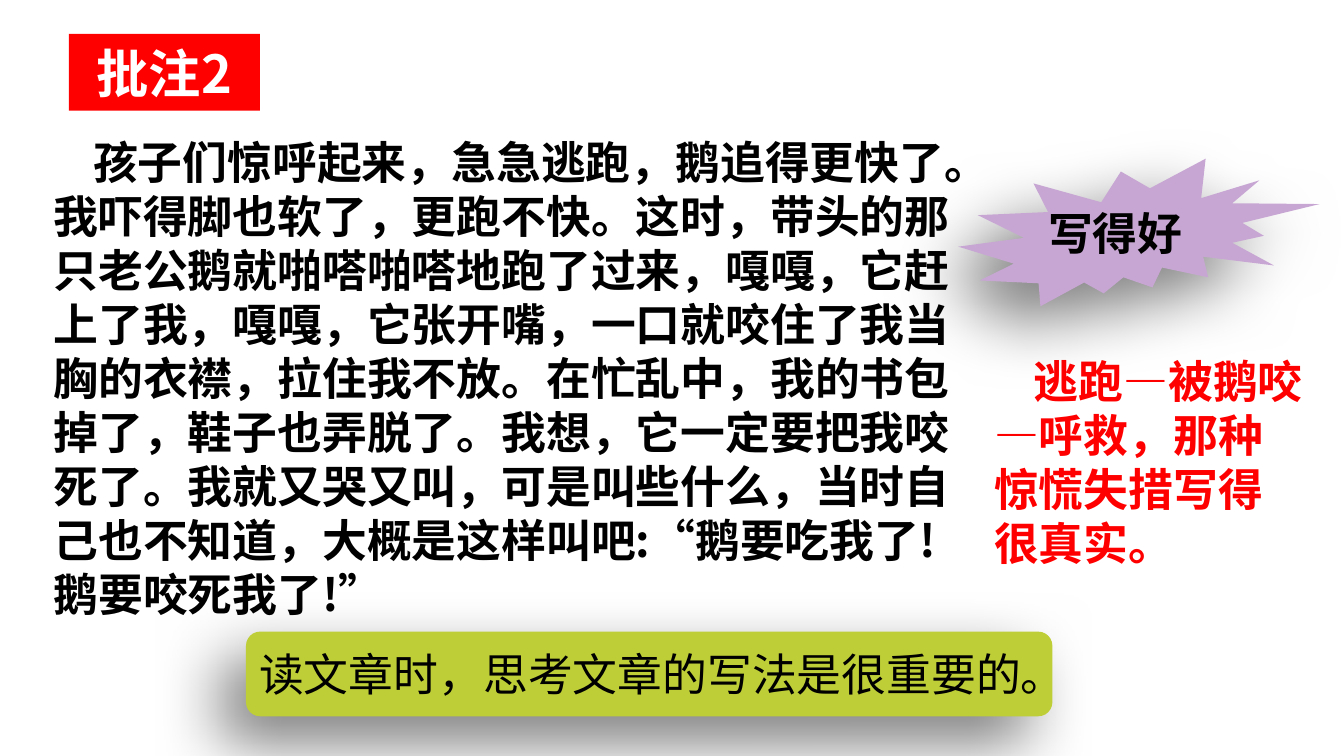
from pptx import Presentation
from pptx.dml.color import RGBColor
from pptx.enum.shapes import MSO_SHAPE
from pptx.enum.text import MSO_ANCHOR, MSO_AUTO_SIZE, PP_ALIGN
from pptx.oxml import parse_xml
from pptx.oxml.ns import nsdecls
from pptx.util import Cm, Pt

FONT = "Noto Sans CJK SC"
BLACK = RGBColor(0x00, 0x00, 0x00)
WHITE = RGBColor(0xFF, 0xFF, 0xFF)
RED = RGBColor(0xFF, 0x00, 0x00)
LILAC = RGBColor(0xC7, 0xA6, 0xD3)
LIME = RGBColor(0xBE, 0xCE, 0x37)

PASSAGE = (
    "孩子们惊呼起来，急急逃跑，鹅追得更快了。我吓得脚也软了，更跑不快。"
    "这时，带头的那只老公鹅就啪嗒啪嗒地跑了过来，嘎嘎，它赶上了我，嘎嘎，"
    "它张开嘴，一口就咬住了我当胸的衣襟，拉住我不放。在忙乱中，我的书包掉了，"
    "鞋子也弄脱了。我想，它一定要把我咬死了。我就又哭又叫，可是叫些什么，"
    "当时自己也不知道，大概是这样叫吧:“鹅要吃我了!鹅要咬死我了!”"
)
COMMENT = "逃跑—被鹅咬—呼救，那种惊慌失措写得很真实。"


def place(shape, box):
    shape.left, shape.top, shape.width, shape.height = (Cm(v) for v in box)


def write(shape, text, size=24, color=BLACK, bold=True, align=PP_ALIGN.LEFT,
          anchor=MSO_ANCHOR.MIDDLE, wrap=True, indent=0, pitch=None, top=0.13):
    """Fill a shape with one formatted paragraph."""
    tf = shape.text_frame
    tf.word_wrap = wrap
    tf.auto_size = MSO_AUTO_SIZE.NONE
    tf.vertical_anchor = anchor
    tf.margin_left = tf.margin_right = Cm(0.25)
    tf.margin_top, tf.margin_bottom = Cm(top), Cm(0.13)
    p = tf.paragraphs[0]
    p.alignment = align
    p.space_before = Pt(0)
    if pitch:
        p.line_spacing = Pt(pitch)
    pPr = p._p.get_or_add_pPr()
    pPr.set("marL", "0")
    pPr.set("indent", str(Cm(indent)))
    pPr.append(parse_xml(f"<a:buNone {nsdecls('a')}/>"))
    r = p.add_run()
    r.text = text
    r.font.size, r.font.bold, r.font.name = Pt(size), bold, FONT
    r.font.color.rgb = color
    r._r.get_or_add_rPr().append(
        parse_xml(f'<a:ea {nsdecls("a")} typeface="{FONT}"/>'))


def add_soft_shadow(shape):
    shape._element.spPr.append(parse_xml(
        f'<a:effectLst {nsdecls("a")}><a:outerShdw blurRad="{Pt(35)}" '
        f'dist="{Pt(20)}" dir="8100000" algn="tr" rotWithShape="0">'
        '<a:srgbClr val="000000"><a:alpha val="50000"/></a:srgbClr>'
        '</a:outerShdw></a:effectLst>'))


def add_label(s, kind, box, text_box, fill, text, **fmt):
    """Group a shadowed shape with the caption on it."""
    group = s.shapes.add_group_shape()
    shape = group.shapes.add_shape(kind, *(Cm(v) for v in box))
    shape.fill.solid()
    shape.fill.fore_color.rgb = fill
    shape.line.fill.background()
    add_soft_shadow(shape)
    caption = group.shapes.add_textbox(*(Cm(v) for v in text_box))
    write(caption, text, **fmt)


def add_heading(s, box):
    title = s.shapes.title
    place(title, box)
    title.fill.solid()
    title.fill.fore_color.rgb = RED
    write(title, "批注2", size=28, color=WHITE, align=PP_ALIGN.CENTER)


def add_passage(s, box):
    body = s.placeholders[1]
    place(body, box)
    write(body, PASSAGE, anchor=MSO_ANCHOR.TOP, indent=0.75, pitch=28.9, top=0.2)


def add_comment(s, box):
    tb = s.shapes.add_textbox(*(Cm(v) for v in box))
    write(tb, COMMENT, color=RED, anchor=MSO_ANCHOR.TOP, indent=0.75,
          pitch=28.9, top=0.2)


def add_praise(s, box):
    left, top, _, _ = box
    add_label(s, MSO_SHAPE.EXPLOSION2, box, (left + 1.45, top + 0.76, 3.1, 1.27),
              LILAC, "写得好", wrap=False)


def add_advice(s, box):
    add_label(s, MSO_SHAPE.ROUNDED_RECTANGLE, box, box, LIME,
              "读文章时，思考文章的写法是很重要的。", bold=False)


def main():
    prs = Presentation()
    prs.slide_width, prs.slide_height = Cm(25.4), Cm(14.29)
    s = prs.slides.add_slide(prs.slide_layouts[1])
    add_passage(s, (0.76, 2.34, 17.81, 9.47))
    add_comment(s, (18.54, 6.48, 6.4, 4.37))
    add_praise(s, (18.11, 3, 6.83, 2.79))
    add_advice(s, (4.65, 11.94, 15.24, 1.6))
    add_heading(s, (1.3, 0.64, 3.61, 1.45))
    prs.save("out.pptx")


if __name__ == "__main__":
    main()
